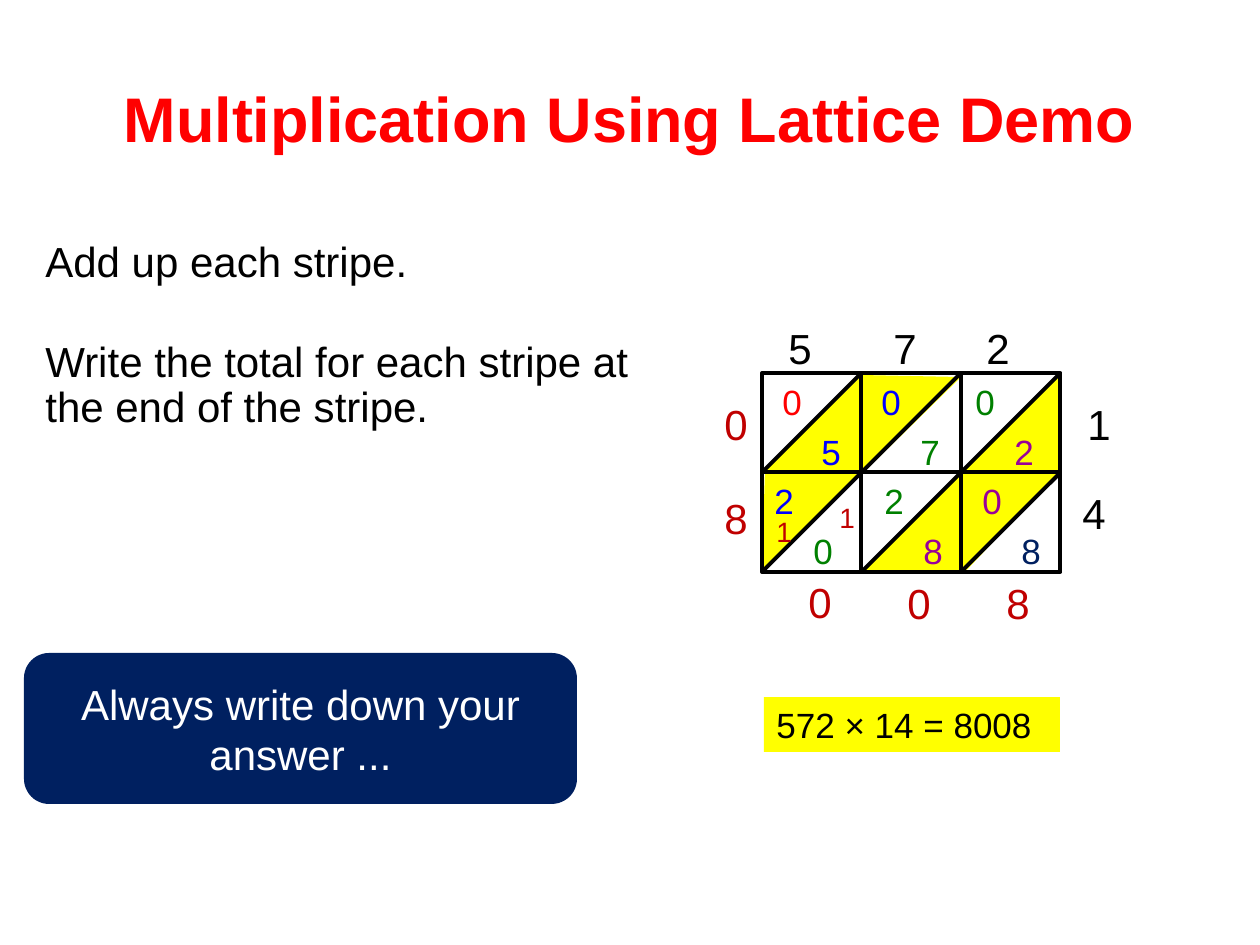
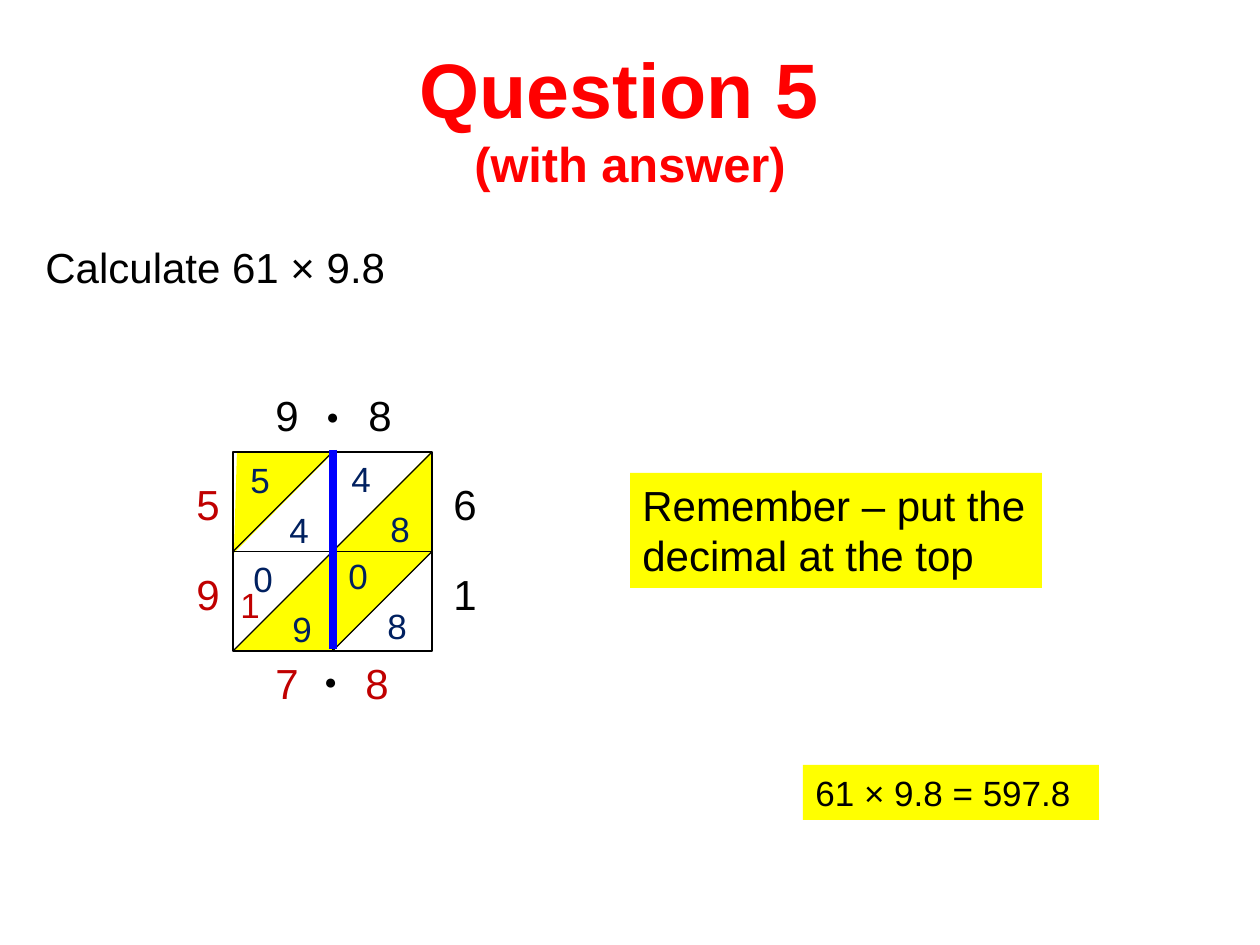
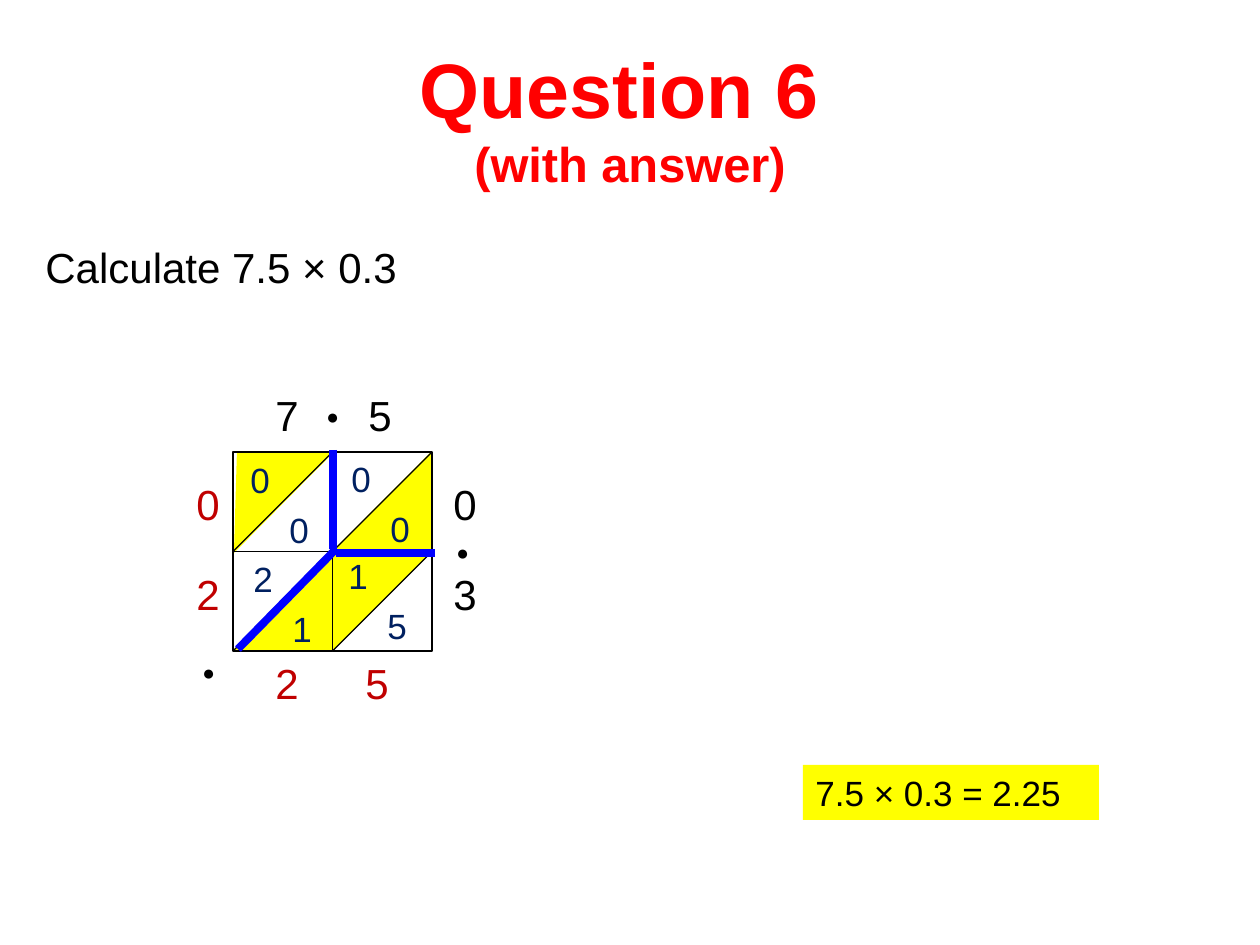
import pptx
import pptx.util
import pptx.dml.color
import pptx.enum.shapes
import pptx.enum.text
import pptx.oxml.ns
from lxml import etree

RGB = pptx.dml.color.RGBColor
SHAPE = pptx.enum.shapes.MSO_SHAPE
ALIGN = pptx.enum.text.PP_ALIGN
ANCHOR = pptx.enum.text.MSO_ANCHOR

BLACK = RGB(0x00, 0x00, 0x00)
WHITE = RGB(0xFF, 0xFF, 0xFF)
RED = RGB(0xFF, 0x00, 0x00)
BLUE = RGB(0x00, 0x00, 0xFF)
GREEN = RGB(0x00, 0x80, 0x00)
PURPLE = RGB(0x99, 0x00, 0x99)
NAVY = RGB(0x00, 0x20, 0x60)
CRIMSON = RGB(0xC0, 0x00, 0x00)
YELLOW = RGB(0xFF, 0xFF, 0x00)

FONT = "Arial"
DOT = "●"
DOT_FONT = "Times New Roman"
TWO_CELLS = 199          # px across two lattice cells
CELL_BOX = (89, 106)     # text box holding a cell's tens and units
UNITS_INDENT = 39        # how far the units digit sits to the right
LABEL_BOX = {24: (49, 63), 20: (45, 55), 16: (42, 47), 12: (42, 38)}

# Content of the demo slide
DEMO = {
    "title": [("Multiplication Using Lattice Demo", 36)],
    "title_box": (59, 38, 1141, 158),
    "body": [["Add up each stripe."],
             ["Write the total for each stripe at", "the end of the stripe."]],
    "stripes": [[(762, 572), (765, 471), (862, 375), (961, 377)],
                [(964, 573), (863, 571), (1060, 374), (1061, 470)]],
    "corner": (762, 373), "columns": 3, "line": 2.25,
    "diagonals": [(0, 1, 1), (0, 2, 2), (1, 2, 2), (2, 2, 1)],
    "top": ("5\t7\t2", (776, 316, 287, 63), [105, 198]),
    "cells": [
        (770, 374, ("0", RED), ("5", BLUE)),
        (869, 374, ("0", BLUE), ("7", GREEN)),
        (963, 374, ("0", GREEN), ("2", PURPLE)),
        (762, 473, ("2", BLUE), ("0", GREEN)),
        (872, 473, ("2", GREEN), ("8", PURPLE)),
        (970, 473, ("0", PURPLE), ("8", NAVY)),
    ],
    "labels": [
        (1075, 392, "1", 24, BLACK), (1070, 481, "4", 24, BLACK),
        (895, 571, "0", 24, CRIMSON), (994, 571, "8", 24, CRIMSON),
        (796, 570, "0", 24, CRIMSON), (712, 486, "8", 24, CRIMSON),
        (712, 392, "0", 24, CRIMSON),
        (827, 494, "1", 16, CRIMSON), (764, 508, "1", 16, CRIMSON),
    ],
    "dots": [], "decimal_lines": [],
    "answer": ("572 × 14 = 8008", 764, 697),
}

# Content of the question slides; cells run row by row as (tens, units)
QUESTIONS = [
    {"number": 5, "sum": "61 × 9.8", "answer": "597.8", "top": "98",
     "right": "61", "left": "59", "bottom": "78",
     "cells": ["54", "48", "09", "08"],
     "carries": [(228, 577, "1", 20, CRIMSON)],
     "dots": [(314, 397), (312, 662)],
     "decimal_lines": [(333, 450, 333, 649)]},
    {"number": 6, "sum": "7.5 × 0.3", "answer": "2.25", "top": "75",
     "right": "03", "left": "02", "bottom": "25",
     "cells": ["00", "00", "21", "15"],
     "carries": [],
     "dots": [(314, 397), (190, 653), (444, 533)],
     "decimal_lines": [(333, 450, 333, 549), (336, 553, 435, 553),
                       (336, 549, 238, 649)]},
]

# Places shared by the question slides
QUESTION_STRIPES = [[(334, 650), (234, 650), (431, 452), (433, 551)],
                    [(234, 553), (237, 452), (335, 451)]]
CELL_SPOTS = [(238, 452), (339, 451), (241, 551), (336, 548)]
ROW_TOPS = (472, 562)
BOTTOM_LEFTS = (263, 353)


def question_slide(question):
    """Fill the shared question layout with one question's figures."""
    labels = []
    for x, side, color in ((441, "right", BLACK), (184, "left", CRIMSON)):
        labels += [(x, y, digit, 24, color) for y, digit in zip(ROW_TOPS, question[side])]
    labels += [(x, 651, digit, 24, CRIMSON)
               for x, digit in zip(BOTTOM_LEFTS, question["bottom"])]
    return {
        "title": [(f"Question {question['number']} ", 44.1), ("(with answer)", 27.9)],
        "title_box": (63, 38, 1134, 158),
        "body": [[f"Calculate {question['sum']}"]],
        "stripes": QUESTION_STRIPES,
        "corner": (233, 452), "columns": 2, "line": 0.75,
        "diagonals": [(1, 1, 1), (0, 2, 1), (1, 2, 1), (0, 1, 1)],
        "top": ("\t".join(question["top"]), (263, 383, 169, 63), [93]),
        "cells": [(x, y, (tens, NAVY), (units, NAVY))
                  for (x, y), (tens, units) in zip(CELL_SPOTS, question["cells"])],
        "labels": labels + question["carries"],
        "dots": question["dots"], "decimal_lines": question["decimal_lines"],
        "answer": (f"{question['sum']} = {question['answer']}", 803, 765),
    }


def px(length):
    return pptx.util.Emu(round(length * 914400 / 126))


def add_run(paragraph, text, size, color, bold=False, font=FONT):
    run = paragraph.add_run()
    run.text = text
    run.font.name, run.font.size, run.font.bold = font, pptx.util.Pt(size), bold
    run.font.color.rgb = color


def text_frame(slide, box):
    frame = slide.shapes.add_textbox(*map(px, box)).text_frame
    frame.word_wrap = True
    return frame


def add_label(slide, x, y, text, size, color, font=FONT):
    frame = text_frame(slide, (x, y, *LABEL_BOX[size]))
    add_run(frame.paragraphs[0], text, size, color, font=font)


def add_panel(slide, kind, box, fill, lines, size, color, align, anchor):
    panel = slide.shapes.add_shape(kind, *map(px, box))
    panel.shadow.inherit = False
    panel.fill.solid()
    panel.fill.fore_color.rgb = fill
    panel.line.fill.background()
    frame = panel.text_frame
    frame.word_wrap, frame.vertical_anchor = True, anchor
    for index, line in enumerate(lines):
        paragraph = frame.add_paragraph() if index else frame.paragraphs[0]
        paragraph.alignment = align
        add_run(paragraph, line, size, color)


def add_line(slide, ends, width, color):
    line = slide.shapes.add_connector(pptx.enum.shapes.MSO_CONNECTOR.STRAIGHT, *map(px, ends))
    line.line.width = pptx.util.Pt(width)
    line.line.color.rgb = color
    etree.SubElement(line._element.spPr, pptx.oxml.ns.qn("a:effectLst"))


def add_stripe(slide, points):
    corners = [(px(x), px(y)) for x, y in points]
    builder = slide.shapes.build_freeform(*corners[0])
    builder.add_line_segments(corners[1:], close=True)
    stripe = builder.convert_to_shape()
    stripe.shadow.inherit = False
    stripe.fill.solid()
    stripe.fill.fore_color.rgb = YELLOW
    stripe.line.fill.background()


def add_headings(slide, content):
    title = text_frame(slide, content["title_box"])
    title.vertical_anchor = ANCHOR.MIDDLE
    heading = title.paragraphs[0]
    heading.alignment = ALIGN.CENTER
    for index, (text, size) in enumerate(content["title"]):
        if index:
            heading.add_line_break()
        add_run(heading, text, size, RED, bold=True)

    body = text_frame(slide, (33, 235, 1193, 220))
    several = len(content["body"]) > 1
    for index, lines in enumerate(content["body"]):
        paragraph = body.add_paragraph() if index else body.paragraphs[0]
        if several:
            paragraph.line_spacing = 0.9
        if index:
            paragraph.space_before = pptx.util.Pt(31)
        for row, line in enumerate(lines):
            if row:
                paragraph.add_line_break()
            add_run(paragraph, line, 24, BLACK)


def add_top_digits(slide, digits, box, stops):
    paragraph = text_frame(slide, box).paragraphs[0]
    tabs = etree.SubElement(paragraph._p.get_or_add_pPr(), pptx.oxml.ns.qn("a:tabLst"))
    for stop in stops:
        etree.SubElement(tabs, pptx.oxml.ns.qn("a:tab"), pos=str(px(stop)), algn="l")
    add_run(paragraph, digits, 24, BLACK)


def add_lattice(slide, content):
    left, top = content["corner"]
    cell = TWO_CELLS / 2
    for row in range(2):
        for column in range(content["columns"]):
            square = slide.shapes.add_shape(
                SHAPE.RECTANGLE, px(left + column * cell), px(top + row * cell),
                px(cell), px(cell))
            square.shadow.inherit = False
            square.fill.background()
            square.line.color.rgb = BLACK
            square.line.width = pptx.util.Pt(content["line"])

    # Each diagonal climbs to the right from a grid point
    for column, row, length in content["diagonals"]:
        x, y, rise = left + column * cell, top + row * cell, length * cell
        add_line(slide, (x, y, x + rise, y - rise), content["line"], BLACK)

    for x, y, tens, units in content["cells"]:
        frame = text_frame(slide, (x, y, *CELL_BOX))
        add_run(frame.paragraphs[0], tens[0], 20, tens[1])
        below = frame.add_paragraph()
        below.space_before = pptx.util.Pt(4.8)
        below._p.get_or_add_pPr().set("marL", str(px(UNITS_INDENT)))
        add_run(below, units[0], 20, units[1])


def build_slide(deck, content):
    slide = deck.slides.add_slide(deck.slide_layouts[6])
    for points in content["stripes"]:
        add_stripe(slide, points)
    add_headings(slide, content)
    add_top_digits(slide, *content["top"])
    add_lattice(slide, content)
    for label in content["labels"]:
        add_label(slide, *label)
    for x, y in content["dots"]:
        add_label(slide, x, y, DOT, 12, BLACK, DOT_FONT)
    for ends in content["decimal_lines"]:
        add_line(slide, ends, 4.5, BLUE)
    answer, x, y = content["answer"]
    add_panel(slide, SHAPE.RECTANGLE, (x, y, 296, 55), YELLOW, [answer],
              20, BLACK, ALIGN.LEFT, ANCHOR.TOP)
    return slide


def main():
    deck = pptx.Presentation()
    deck.slide_width, deck.slide_height = px(1260), px(945)

    demo = build_slide(deck, DEMO)
    add_panel(demo, SHAPE.ROUNDED_RECTANGLE, (24, 653, 553, 151), NAVY,
              ["Always write down your answer ..."], 24, WHITE, ALIGN.CENTER, ANCHOR.MIDDLE)

    decimals, _ = [build_slide(deck, question_slide(question)) for question in QUESTIONS]
    add_panel(decimals, SHAPE.RECTANGLE, (630, 473, 412, 115), YELLOW,
              ["Remember – put the", "decimal at the top"], 24, BLACK, ALIGN.LEFT, ANCHOR.TOP)

    deck.save("out.pptx")


if __name__ == "__main__":
    main()
